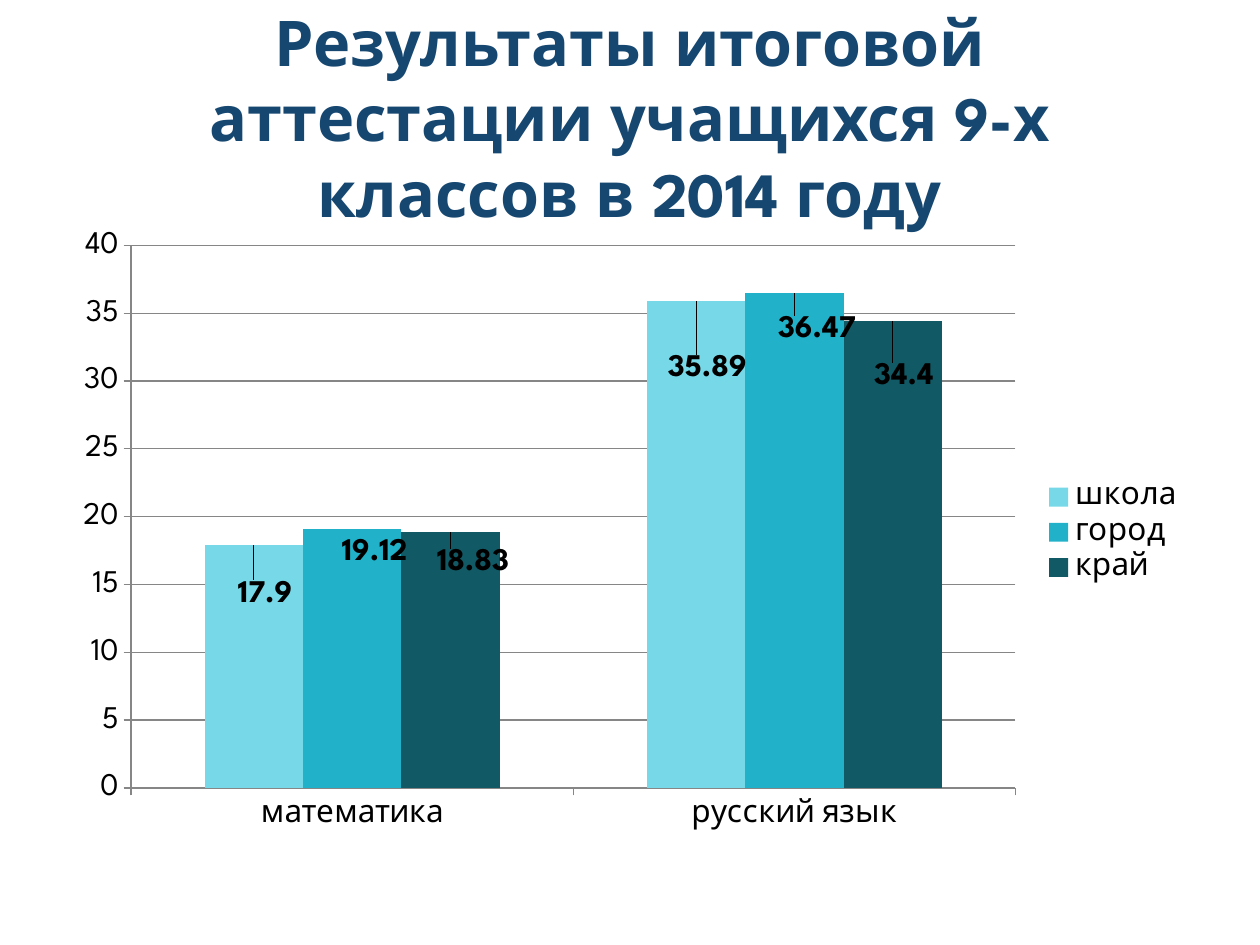
from lxml.etree import SubElement
from pptx import Presentation
from pptx.chart.data import CategoryChartData
from pptx.dml.color import RGBColor
from pptx.enum.chart import XL_CHART_TYPE, XL_LABEL_POSITION, XL_LEGEND_POSITION, XL_TICK_MARK
from pptx.enum.text import MSO_ANCHOR, PP_ALIGN
from pptx.oxml.ns import qn
from pptx.util import Inches, Pt

FONT = "League Spartan"
NAVY = RGBColor(0x16, 0x47, 0x70)
BLACK = RGBColor(0, 0, 0)
GRAY = RGBColor(0x86, 0x86, 0x86)
LIGHT = RGBColor(0x77, 0xD9, 0xE8)
TEAL = RGBColor(0x21, 0xB2, 0xC9)
DARK = RGBColor(0x11, 0x59, 0x64)

SUBJECTS = ["математика", "русский язык"]
# name, values, colour, label shifts as shares of the chart size
SERIES = [
    ("школа", (17.9, 35.89), LIGHT, ((0.01, 0.11), (0.01, 0.14))),
    ("город", (19.12, 36.47), TEAL, ((0.02, 0.07), (0.02, 0.09))),
    ("край", (18.83, 34.4), DARK, ((0.02, 0.08), (0.01, 0.12))),
]


def place(parent, index, **parts):
    """Give a chart element a manual layout as its child at index."""
    layout = parent.find(qn("c:layout"))
    if layout is None:
        layout = parent.makeelement(qn("c:layout"))
        parent.insert(index, layout)
    manual = SubElement(layout, qn("c:manualLayout"))
    for tag, value in parts.items():
        SubElement(manual, qn(f"c:{tag}")).set("val", str(value))


class Deck:
    def __init__(self):
        self.file = Presentation()
        self.file.slide_width, self.file.slide_height = Inches(10), Inches(7.5)
        self.slide = self.file.slides.add_slide(self.file.slide_layouts[6])

    def style(self, font, size, color, bold=False):
        font.name, font.size, font.bold = FONT, Pt(size), bold
        font.color.rgb = color

    def title(self, text, left, top, width, height):
        box = self.slide.shapes.add_textbox(
            Inches(left), Inches(top), Inches(width), Inches(height))
        frame = box.text_frame
        frame.word_wrap = True
        frame.vertical_anchor = MSO_ANCHOR.MIDDLE
        line = frame.paragraphs[0]
        line.text = text
        line.alignment = PP_ALIGN.CENTER
        self.style(line.font, 36, NAVY, True)

    def columns(self, left, top, width, height):
        data = CategoryChartData()
        data.categories = SUBJECTS
        for name, values, *_ in SERIES:
            data.add_series(name, values)
        chart = self.slide.shapes.add_chart(
            XL_CHART_TYPE.COLUMN_CLUSTERED, Inches(left), Inches(top),
            Inches(width), Inches(height), data).chart
        self.style(chart.font, 18, BLACK)
        chart.has_title = False
        chart.has_legend = True
        chart.legend.position = XL_LEGEND_POSITION.RIGHT
        chart.legend.include_in_layout = False
        self.axes(chart)

        plot = chart.plots[0]
        plot.gap_width, plot.overlap = 150, 0
        plot.vary_by_categories = False
        for series, (_, _, color, _) in zip(plot.series, SERIES):
            series.format.fill.solid()
            series.format.fill.fore_color.rgb = color
            self.labels(series)

        shifts = [shift for *_, pair in SERIES for shift in pair]
        for node, (x, y) in zip(chart.element.iter(qn("c:dLbl")), shifts):
            place(node, 1, x=x, y=y)
        area = chart.element.find(".//" + qn("c:plotArea"))
        place(area, 0, layoutTarget="inner", xMode="edge", yMode="edge",
              x=0.06, y=0.04, w=0.78, h=0.87)

    def axes(self, chart):
        for axis in (chart.category_axis, chart.value_axis):
            axis.major_tick_mark = XL_TICK_MARK.OUTSIDE
            axis.minor_tick_mark = XL_TICK_MARK.NONE
            axis.format.line.color.rgb = GRAY
        axis = chart.value_axis
        axis.minimum_scale, axis.maximum_scale, axis.major_unit = 0, 40, 5
        axis.has_major_gridlines = True
        axis.major_gridlines.format.line.color.rgb = GRAY

    def labels(self, series):
        for spot in range(len(SUBJECTS)):
            label = series.points[spot].data_label
            self.style(label.font, 18, BLACK, True)
            label.position = XL_LABEL_POSITION.OUTSIDE_END
        self.style(series.data_labels.font, 18, BLACK, True)
        series.data_labels.show_value = True


def main():
    deck = Deck()
    deck.title("Результаты итоговой аттестации учащихся 9-х классов в 2014 году",
               0.5, 0.3, 9, 1.25)
    deck.columns(0.5, 1.75, 9, 4.95)
    deck.file.save("out.pptx")


if __name__ == "__main__":
    main()
